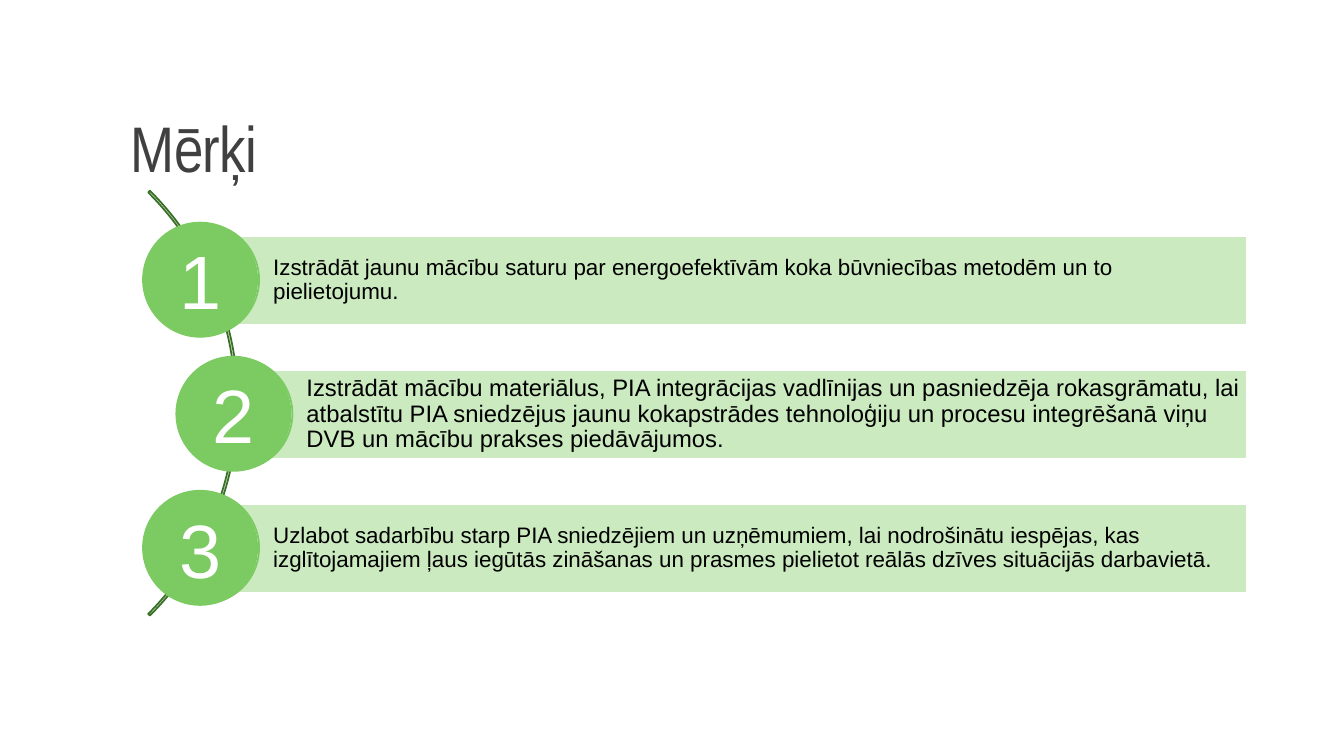
import pptx
import pptx.dml.color
import pptx.enum.shapes
import pptx.enum.text
import pptx.util
from dataclasses import dataclass

PX = 9144
SHAPES = pptx.enum.shapes.MSO_SHAPE
ANCHOR = pptx.enum.text.MSO_ANCHOR
ALIGN = pptx.enum.text.PP_ALIGN


@dataclass(frozen=True)
class Theme:
    body_font: str = "Arial"
    title_font: str = "Arial Narrow"
    title_color: str = "404040"
    text_color: str = "000000"
    white: str = "FFFFFF"
    bar: str = "CBEAC0"
    badge: str = "7CCA62"
    arc: str = "387026"
    title_size: int = 46
    number_size: int = 54
    line_width: float = 1.25


THEME = Theme()

GOALS = [
    ("Izstrādāt jaunu mācību saturu par energoefektīvām koka būvniecības metodēm "
     "un to pielietojumu.", 16, 0),
    ("Izstrādāt mācību materiālus, PIA integrācijas vadlīnijas un pasniedzēja "
     "rokasgrāmatu, lai atbalstītu PIA sniedzējus jaunu kokapstrādes tehnoloģiju "
     "un procesu integrēšanā viņu DVB un mācību prakses piedāvājumos.", 17, 33),
    ("Uzlabot sadarbību starp PIA sniedzējiem un uzņēmumiem, lai nodrošinātu "
     "iespējas, kas izglītojamajiem ļaus iegūtās zināšanas un prasmes pielietot "
     "reālās dzīves situācijās darbavietā.", 16, 0),
]


def rgb(value):
    return pptx.dml.color.RGBColor.from_string(value)


def add_shape(slide, kind, box, fill=None, line=None):
    shape = slide.shapes.add_shape(kind, *(value * PX for value in box))
    shape.shadow.inherit = False
    if fill:
        shape.fill.solid()
        shape.fill.fore_color.rgb = rgb(fill)
    else:
        shape.fill.background()
    if line:
        shape.line.color.rgb = rgb(line)
        shape.line.width = pptx.util.Pt(THEME.line_width)
    else:
        shape.line.fill.background()
    return shape


def write(shape, text, size, color, font, anchor, align=ALIGN.LEFT, spacing=1.0):
    frame = shape.text_frame
    frame.text = text
    frame.word_wrap = True
    frame.vertical_anchor = anchor
    paragraph = frame.paragraphs[0]
    paragraph.alignment = align
    paragraph.line_spacing = spacing
    run = paragraph.runs[0]
    run.font.name = font
    run.font.size = pptx.util.Pt(size)
    run.font.color.rgb = rgb(color)
    return run


def add_title(slide, box, text):
    title = slide.shapes.add_textbox(*(value * PX for value in box))
    run = write(title, text, THEME.title_size, THEME.title_color,
                THEME.title_font, ANCHOR.BOTTOM, spacing=0.9)
    run._r.get_or_add_rPr().set("spc", "-50")


def add_arc(slide, box):
    arc = add_shape(slide, SHAPES.BLOCK_ARC, box, line=THEME.arc)
    for index, value in enumerate((189, 27, 0.004)):
        arc.adjustments[index] = value


def add_goal(slide, box, number, text, size):
    left, top, width, height = box
    bar = add_shape(slide, SHAPES.RECTANGLE, box, THEME.bar, THEME.white)
    frame = bar.text_frame
    frame.margin_left = 70 * PX
    frame.margin_right = frame.margin_top = frame.margin_bottom = 4 * PX
    write(bar, text, size, THEME.text_color, THEME.body_font, ANCHOR.MIDDLE, spacing=0.9)

    ring = 111
    ring_box = (left - ring // 2, top + (height - ring) // 2, ring, ring)
    add_shape(slide, SHAPES.OVAL, ring_box, THEME.white, THEME.badge)

    diameter = 115
    badge_box = (left - 60, top + (height - diameter) // 2, diameter, diameter)
    badge = add_shape(slide, SHAPES.OVAL, badge_box, THEME.badge)
    write(badge, str(number), THEME.number_size, THEME.white, THEME.body_font,
          ANCHOR.MIDDLE, ALIGN.CENTER)


def add_goal_list(slide, box, goals):
    left, top, width, height = box
    bar_height = 88
    step = (height - bar_height) // (len(goals) - 1)
    add_arc(slide, (left - 561, top + height // 2 - 309, 596, 596 + 0))
    for index, (text, size, indent) in enumerate(goals):
        row = (left + indent, top + index * step, width - indent, bar_height)
        add_goal(slide, row, index + 1, text, size)


def main():
    presentation = pptx.Presentation()
    presentation.slide_width = 1333 * PX
    presentation.slide_height = 750 * PX
    slide = presentation.slides.add_slide(presentation.slide_layouts[6])
    add_title(slide, (120, 31, 1100, 159), "Mērķi")
    add_goal_list(slide, (201, 234, 1036, 354), GOALS)
    presentation.save("out.pptx")


if __name__ == "__main__":
    main()
